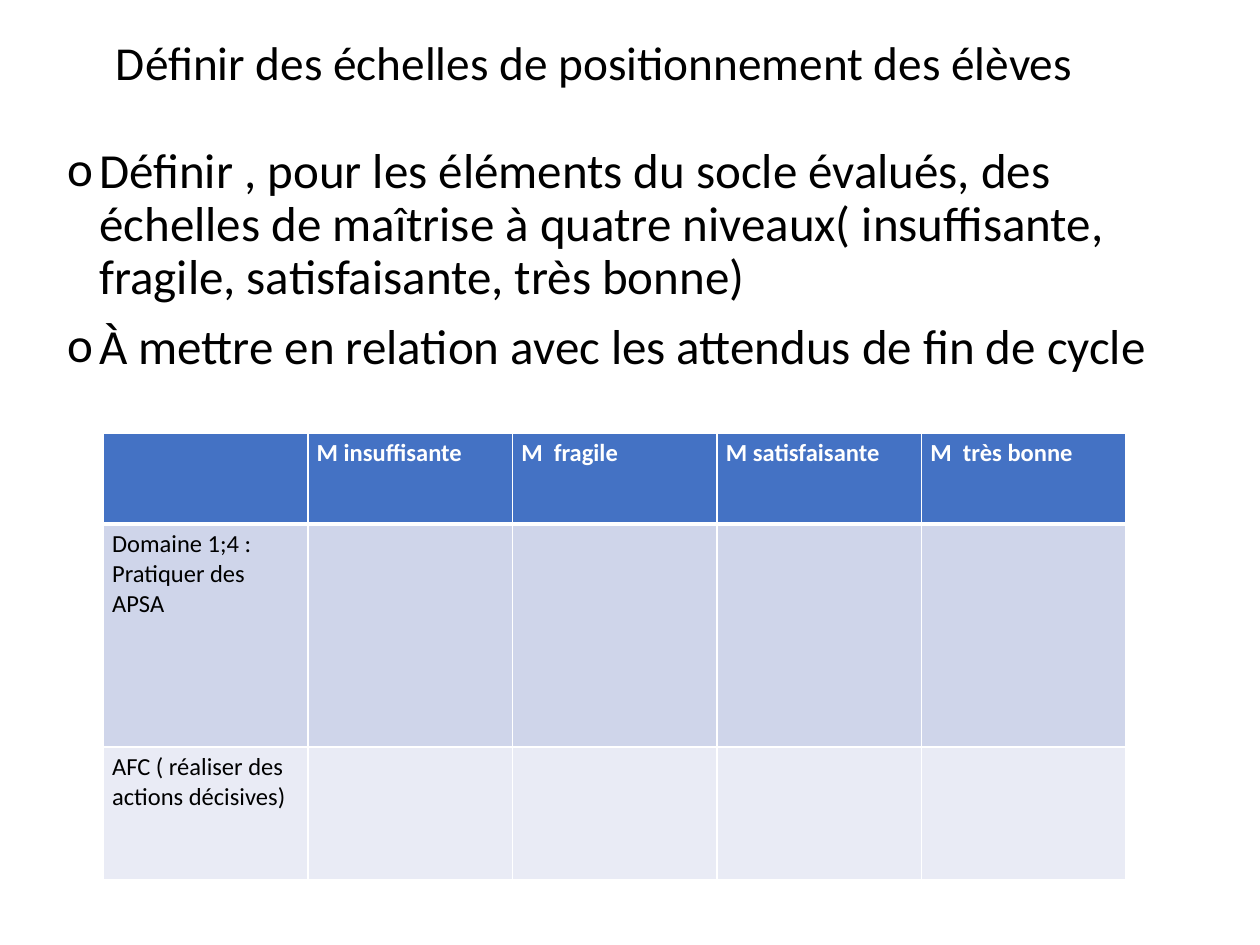
from dataclasses import dataclass

from lxml import etree
from pptx import Presentation
from pptx.dml.color import RGBColor
from pptx.enum.text import MSO_ANCHOR, PP_ALIGN
from pptx.oxml.ns import qn
from pptx.util import Inches, Pt

LEFT, MIDDLE, TOP = PP_ALIGN.LEFT, MSO_ANCHOR.MIDDLE, MSO_ANCHOR.TOP
FONT = "Calibri"
BLACK, WHITE = "000000", "FFFFFF"
TITLE = "Définir des échelles de positionnement des élèves"
GUIDELINES = [
    "Définir , pour les éléments du socle évalués, des échelles de maîtrise "
    "à quatre niveaux( insuffisante, fragile, satisfaisante, très bonne)",
    "À mettre en relation avec les attendus de fin de cycle",
]
COLUMN_WIDTH = 1.624
CELL_MARGINS = {
    "margin_left": Inches(0.07), "margin_right": Inches(0.07),
    "margin_top": Inches(0.04), "margin_bottom": Inches(0.04),
}


@dataclass
class ScaleRow:
    texts: list[str]
    height: float
    fill: str
    color: str = BLACK
    bold: bool = False
    top_line: float = 1
    bottom_line: float = 1


SCALE = [
    ScaleRow(["", "M insuffisante", "M  fragile", "M satisfaisante", "M  très bonne"],
             0.72, "4472C4", WHITE, bold=True, bottom_line=3),
    ScaleRow(["Domaine 1;4 : Pratiquer des APSA", "", "", "", ""],
             1.77, "CFD5EA", top_line=3),
    ScaleRow(["AFC ( réaliser des\nactions décisives)", "", "", "", ""],
             1.05, "E9EBF5"),
]


def rgb(color: str) -> RGBColor:
    return RGBColor.from_string(color)


def set_attributes(target, values: dict) -> None:
    for name, value in values.items():
        setattr(target, name, value)


def format_paragraph(paragraph, size: float, color: str = BLACK,
                     bold: bool = False, **spacing) -> None:
    set_attributes(paragraph, {"alignment": LEFT, **spacing})
    for run in paragraph.runs:
        set_attributes(run.font, {"name": FONT, "size": Pt(size), "bold": bold})
        run.font.color.rgb = rgb(color)


def add_bullet(paragraph, character: str, indent: float) -> None:
    properties = paragraph._p.get_or_add_pPr()
    properties.set("marL", str(Inches(indent)))
    properties.set("indent", str(-Inches(indent)))
    etree.SubElement(properties, qn("a:buFont"), typeface=FONT)
    etree.SubElement(properties, qn("a:buChar"), char=character)


def add_borders(cell, top: float, bottom: float) -> None:
    properties = cell._tc.get_or_add_tcPr()
    for side, width in {"L": 1, "R": 1, "T": top, "B": bottom}.items():
        line = etree.SubElement(properties, qn(f"a:ln{side}"), w=str(Pt(width)))
        fill = etree.SubElement(line, qn("a:solidFill"))
        etree.SubElement(fill, qn("a:srgbClr"), val=WHITE)


def fill_cell(cell, text: str, row: ScaleRow) -> None:
    set_attributes(cell, CELL_MARGINS)
    add_borders(cell, row.top_line, row.bottom_line)
    cell.fill.solid()
    cell.fill.fore_color.rgb = rgb(row.fill)
    if text:
        cell.text = text
    for paragraph in cell.text_frame.paragraphs:
        format_paragraph(paragraph, 14, row.color, row.bold)


def add_title(slide) -> None:
    title = slide.shapes.title
    set_attributes(title, {"left": Inches(0.82), "top": Inches(0.26),
                           "width": Inches(8.62), "height": Inches(0.52)})
    title.text_frame.text = TITLE
    title.text_frame.vertical_anchor = MIDDLE
    format_paragraph(title.text_frame.paragraphs[0], 27, line_spacing=0.9)


def add_guidelines(slide) -> None:
    guidelines = slide.shapes.add_textbox(
        Inches(0.44), Inches(1.11), Inches(8.88), Inches(5.64)).text_frame
    set_attributes(guidelines, {"word_wrap": True, "vertical_anchor": TOP})
    guidelines.text = "\n".join(GUIDELINES)
    for paragraph in guidelines.paragraphs:
        format_paragraph(paragraph, 28, line_spacing=0.9, space_before=Pt(10))
        add_bullet(paragraph, "o", 0.25)


def add_scale(slide) -> None:
    columns = len(SCALE[0].texts)
    scale = slide.shapes.add_table(
        len(SCALE), columns, Inches(0.82), Inches(3.44),
        Inches(COLUMN_WIDTH * columns), Inches(sum(row.height for row in SCALE))).table
    for column in scale.columns:
        column.width = Inches(COLUMN_WIDTH)
    for table_row, row in zip(scale.rows, SCALE):
        table_row.height = Inches(row.height)
        for cell, text in zip(table_row.cells, row.texts):
            fill_cell(cell, text, row)


def main() -> None:
    presentation = Presentation()
    set_attributes(presentation, {"slide_width": Inches(10), "slide_height": Inches(7.5)})
    # Title-only layout
    slide = presentation.slides.add_slide(presentation.slide_layouts[5])
    add_title(slide)
    add_guidelines(slide)
    # Mastery levels, one column each
    add_scale(slide)
    presentation.save("out.pptx")


if __name__ == "__main__":
    main()
